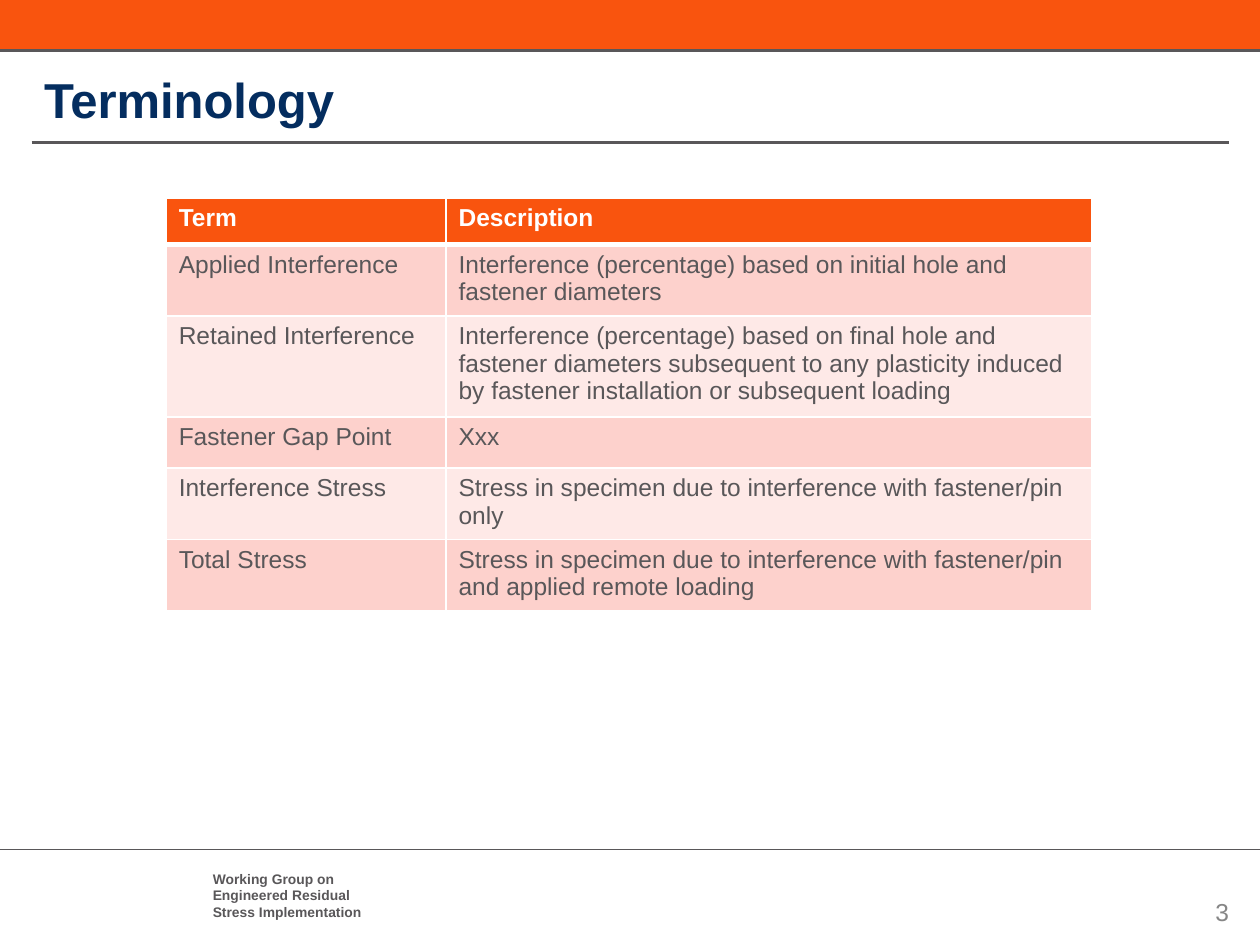
"""Build the Terminology slide with its table of terms and descriptions."""
from dataclasses import dataclass

from lxml.etree import SubElement
from pptx import Presentation
from pptx.dml.color import RGBColor
from pptx.enum.shapes import MSO_CONNECTOR, MSO_SHAPE
from pptx.enum.text import MSO_ANCHOR, PP_ALIGN
from pptx.oxml import parse_xml
from pptx.oxml.ns import nsdecls, qn
from pptx.util import Cm, Pt


@dataclass(frozen=True)
class Theme:
    font: str = "Arial"
    orange: str = "F9540E"
    navy: str = "042D5F"
    gray: str = "595759"
    light_gray: str = "868686"
    white: str = "FFFFFF"
    bands: tuple = ("FDD1CC", "FEE9E7")
    title_size: float = 28
    body_size: float = 14
    footer_size: float = 7.9


theme = Theme()


def add_text(text_frame, lines, size, color, bold=False, alignment=PP_ALIGN.LEFT):
    text_frame.word_wrap = True
    paragraph = text_frame.paragraphs[0]
    paragraph.alignment = alignment
    for index, line in enumerate(lines):
        if index:
            paragraph.add_line_break()
        run = paragraph.add_run()
        run.text = line
        run.font.name = theme.font
        run.font.size = Pt(size)
        run.font.bold = bold
        run.font.color.rgb = RGBColor.from_string(color)


def add_border(cell, side, width):
    cell_properties = cell._tc.get_or_add_tcPr()
    cell_properties.append(parse_xml(
        f'<a:ln{side} {nsdecls("a")} w="{Pt(width)}"><a:solidFill>'
        f'<a:srgbClr val="{theme.white}"/></a:solidFill></a:ln{side}>'
    ))


presentation = Presentation()
presentation.slide_width = Cm(25.4)
presentation.slide_height = Cm(19.05)
slide = presentation.slides.add_slide(presentation.slide_layouts[6])

banner = slide.shapes.add_shape(MSO_SHAPE.RECTANGLE, 0, 0, Cm(25.4), Cm(1.02))
banner.shadow.inherit = False
banner.fill.solid()
banner.fill.fore_color.rgb = RGBColor.from_string(theme.orange)
banner.line.fill.background()

rules = [(0, 25.4, 1.02, 1.5), (0, 25.4, 17.12, 0.75), (0.64, 24.77, 2.87, 1.5)]
for left, right, top, width in rules:
    rule = slide.shapes.add_connector(
        MSO_CONNECTOR.STRAIGHT, Cm(left), Cm(top), Cm(right), Cm(top)
    )
    rule.line.width = Pt(width)
    rule.line.color.rgb = RGBColor.from_string(theme.gray)
    SubElement(rule._element.spPr, qn("a:effectLst"))

title = slide.shapes.add_textbox(Cm(0.64), Cm(1.14), Cm(24.13), Cm(1.7))
title.text_frame.vertical_anchor = MSO_ANCHOR.MIDDLE
add_text(title.text_frame, ["Terminology"], theme.title_size, theme.navy, bold=True)

footer = slide.shapes.add_textbox(Cm(4.04), Cm(17.42), Cm(3.96), Cm(1.27))
footer_lines = ["Working Group on", "Engineered Residual Stress Implementation"]
add_text(footer.text_frame, footer_lines, theme.footer_size, theme.gray, bold=True)

page_number = slide.shapes.add_textbox(Cm(24.03), Cm(17.96), Cm(1.22), Cm(0.84))
add_text(page_number.text_frame, ["3"], theme.body_size, theme.light_gray,
         alignment=PP_ALIGN.CENTER)

terms = [
    ("Term", "Description"),
    ("Applied Interference",
     "Interference (percentage) based on initial hole and fastener diameters"),
    ("Retained Interference",
     "Interference (percentage) based on final hole and fastener diameters "
     "subsequent to any plasticity induced by fastener installation or "
     "subsequent loading"),
    ("Fastener Gap Point", "Xxx"),
    ("Interference Stress",
     "Stress in specimen due to interference with fastener/pin only"),
    ("Total Stress",
     "Stress in specimen due to interference with fastener/pin and applied "
     "remote loading"),
]
row_heights = [0.94] + [1.03] * 5
column_widths = [5.64, 13.02]
table = slide.shapes.add_table(
    len(terms), len(column_widths), Cm(3.35), Cm(3.99),
    Cm(sum(column_widths)), Cm(sum(row_heights)),
).table
for column, width in zip(table.columns, column_widths):
    column.width = Cm(width)
for row_index, (row, texts) in enumerate(zip(table.rows, terms)):
    is_header = row_index == 0
    row.height = Cm(row_heights[row_index])
    fill_color = theme.orange if is_header else theme.bands[(row_index - 1) % 2]
    text_color = theme.white if is_header else theme.gray
    top_width = 3 if row_index == 1 else 1
    bottom_width = 3 if is_header else 1
    for cell, text in zip(row.cells, texts):
        for side, width in zip("LRTB", (1, 1, top_width, bottom_width)):
            add_border(cell, side, width)
        cell.fill.solid()
        cell.fill.fore_color.rgb = RGBColor.from_string(fill_color)
        add_text(cell.text_frame, [text], theme.body_size, text_color, bold=is_header)

presentation.save("out.pptx")
